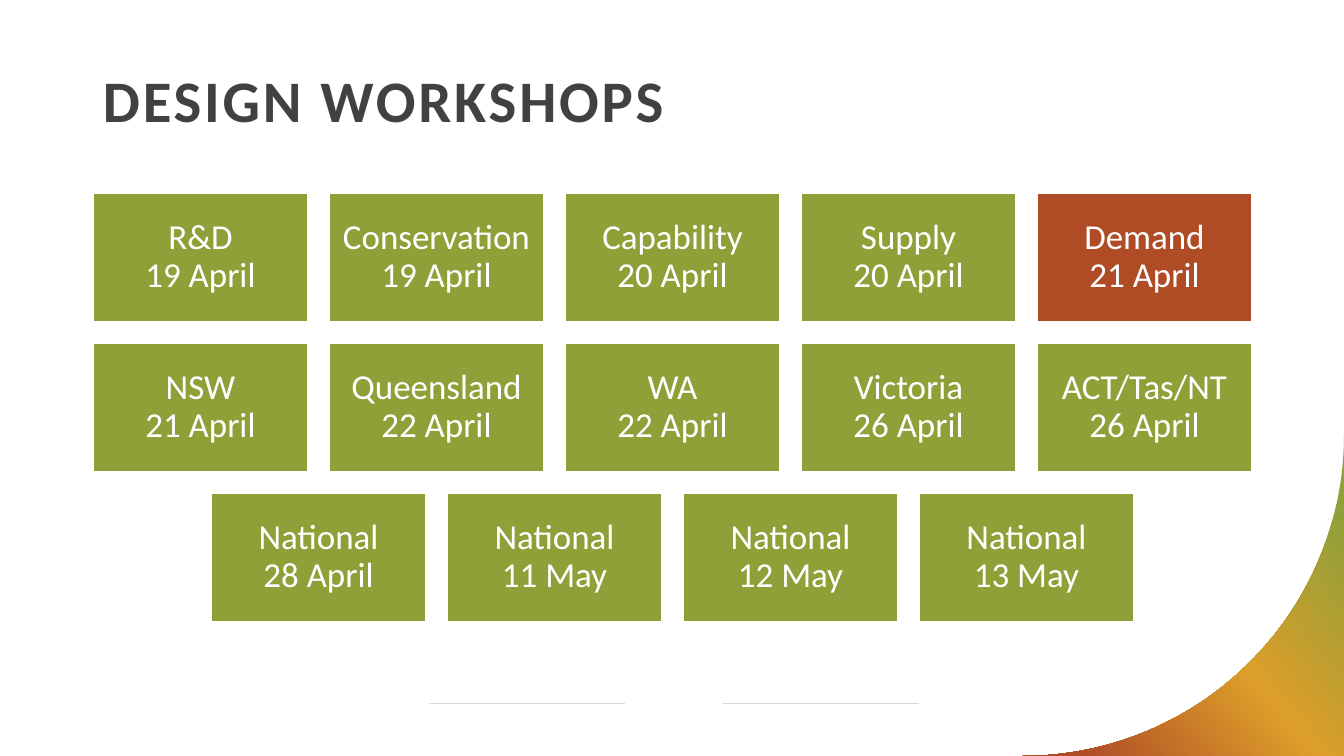
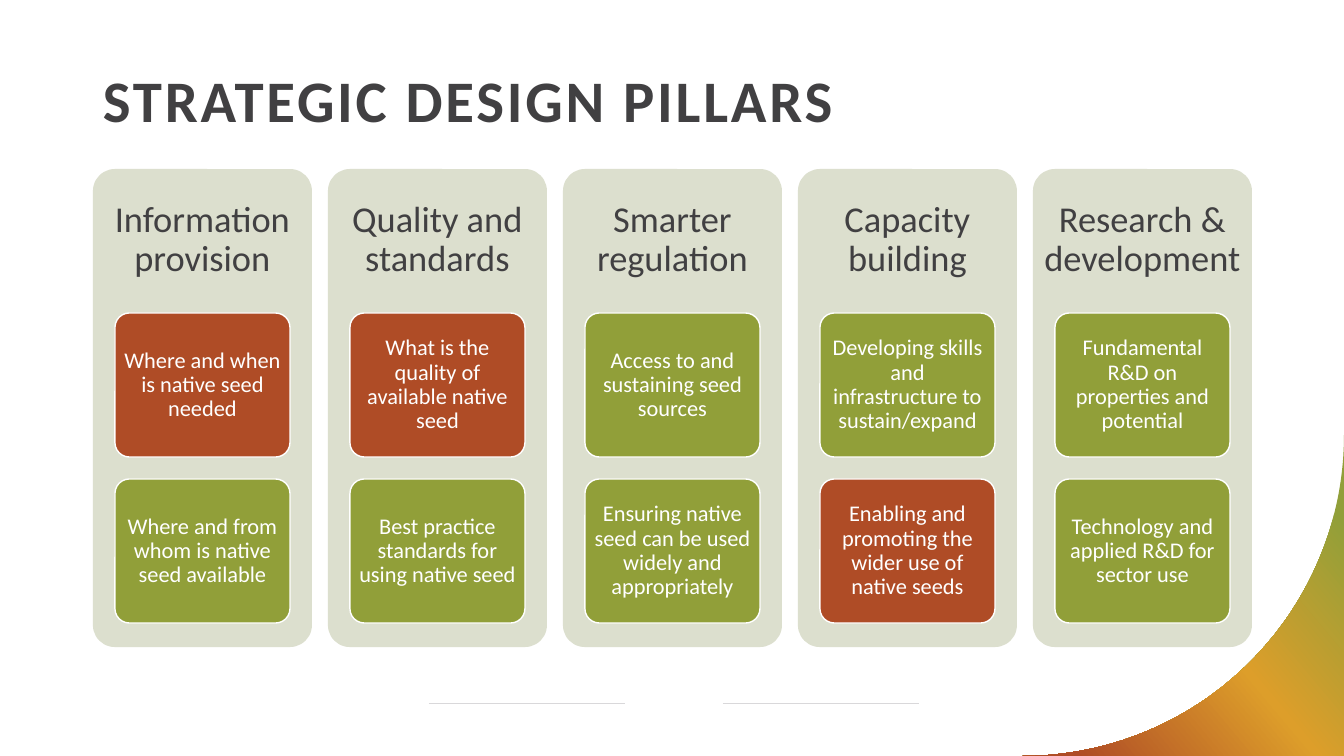
"""Builds two slides on design workshops and strategic design pillars."""
from copy import deepcopy
from dataclasses import dataclass
from math import cos, pi, sin

from pptx import Presentation
from pptx.dml.color import RGBColor
from pptx.enum.shapes import MSO_CONNECTOR, MSO_SHAPE
from pptx.enum.text import MSO_ANCHOR, PP_ALIGN
from pptx.oxml.ns import qn
from pptx.oxml.xmlchemy import OxmlElement
from pptx.util import Pt

RECT, ROUND = MSO_SHAPE.RECTANGLE, MSO_SHAPE.ROUNDED_RECTANGLE
LINE = MSO_CONNECTOR.STRAIGHT
TOP, MIDDLE = MSO_ANCHOR.TOP, MSO_ANCHOR.MIDDLE
LEFT, CENTER = PP_ALIGN.LEFT, PP_ALIGN.CENTER

WIDE, HIGH = 1344, 756
SCALE = 12192000 / WIDE
EDGE = 93


@dataclass(frozen=True)
class Theme:
    """Colours, type sizes and font."""
    ink: str = "414042"
    white: str = "FFFFFF"
    green: str = "919F39"
    gold: str = "DD9E2A"
    red: str = "AF4C26"
    pale: str = "DCDFCE"
    rule: str = "D9D8DA"
    font: str = "Calibri"
    title: int = 42
    head: int = 26
    tile: int = 25
    card: int = 16


THEME = Theme()

SHOPS = (
    (("R&D", "19 April"), ("Conservation", "19 April"), ("Capability", "20 April"),
     ("Supply", "20 April"), ("Demand", "21 April")),
    (("NSW", "21 April"), ("Queensland", "22 April"), ("WA", "22 April"),
     ("Victoria", "26 April"), ("ACT/Tas/NT", "26 April")),
    (("National", "28 April"), ("National", "11 May"), ("National", "12 May"),
     ("National", "13 May")),
)
HOT_SHOP = "Demand"

PILLARS = (
    ("Information provision", "Where and when is native seed needed",
     "Where and from whom is native seed available"),
    ("Quality and standards", "What is the quality of available native seed",
     "Best practice standards for using native seed"),
    ("Smarter regulation", "Access to and sustaining seed sources",
     "Ensuring native seed can be used widely and appropriately"),
    ("Capacity building", "Developing skills and infrastructure to sustain/expand",
     "Enabling and promoting the wider use of native seeds"),
    ("Research & development", "Fundamental R&D on properties and potential",
     "Technology and applied R&D for sector use"),
)
HOT_CARDS = (PILLARS[0][1], PILLARS[1][1], PILLARS[3][2])


def px(*sizes):
    """Turn pixel lengths into EMU."""
    return [round(size * SCALE) for size in sizes]


def rgb(code):
    """Turn a hex code into a colour."""
    return RGBColor.from_string(code)


def write(shape, text, size, color, inset, align=CENTER, anchor=MIDDLE):
    """Put one styled paragraph in a shape and return the paragraph."""
    frame = shape.text_frame
    frame.word_wrap = True
    frame.vertical_anchor = anchor
    pad, = px(inset)
    frame.margin_left = frame.margin_right = pad
    frame.margin_top = frame.margin_bottom = pad
    frame.text = text
    para = frame.paragraphs[0]
    para.alignment = align
    para.line_spacing = 0.9
    for run in para.runs:
        run.font.name = THEME.font
        run.font.size = Pt(size)
        run.font.color.rgb = rgb(color)
    return para


def label(slide, box, text, size, color, inset, align=CENTER, anchor=MIDDLE):
    """Add a text box and return its paragraph."""
    shape = slide.shapes.add_textbox(*px(*box))
    return write(shape, text, size, color, inset, align, anchor)


def block(slide, kind, box, fill, edge=None):
    """Add a filled shape, outlined if an edge colour is given."""
    shape = slide.shapes.add_shape(kind, *px(*box))
    shape.shadow.inherit = False
    shape.fill.solid()
    shape.fill.fore_color.rgb = rgb(fill)
    if edge:
        shape.line.color.rgb = rgb(edge)
        shape.line.width = Pt(1)
    else:
        shape.line.fill.background()
    if kind == ROUND:
        shape.adjustments[0] = 0.1
    return shape


def rule(slide, left, right, top):
    """Add a thin level line."""
    line = slide.shapes.add_connector(LINE, *px(left, top, right, top))
    line.line.color.rgb = rgb(THEME.rule)
    line.line.width = Pt(0.5)
    line._element.spPr.append(OxmlElement("a:effectLst"))


def corner(slide):
    """Add the curved gradient corner at the bottom right."""
    size, steps = 321, 90
    turns = [pi / 2 * step / steps for step in range(steps + 1)]
    arc = [px(WIDE - size + size * cos(turn), HIGH - size + size * sin(turn))
           for turn in turns]
    pen = slide.shapes.build_freeform(*px(WIDE, HIGH), scale=1.0)
    pen.add_line_segments(arc, close=True)
    shape = pen.convert_to_shape()
    shape.shadow.inherit = False
    shape.line.fill.background()
    fill = shape.fill
    fill.gradient()
    fill.gradient_angle = 220
    stops = shape._element.spPr.find(".//" + qn("a:gsLst"))
    stops.append(deepcopy(stops[-1]))
    marks = ((0.12, THEME.green), (0.5, THEME.gold), (0.91, THEME.red))
    for stop, (place, color) in zip(fill.gradient_stops, marks):
        stop.position = place
        stop.color.rgb = rgb(color)


def page(deck, title):
    """Add a slide with the shared lines, corner and title."""
    slide = deck.slides.add_slide(deck.slide_layouts[6])
    for left in (429, 723):
        rule(slide, left, left + 196, 703)
    corner(slide)
    para = label(slide, (EDGE, 67, 1159, 102), title, THEME.title, THEME.ink,
                 5, LEFT, TOP)
    para.runs[0].font.bold = True
    para.runs[0]._r.get_or_add_rPr().set("spc", "200")
    slide.shapes[-1].text_frame.margin_left, = px(10)
    return slide


def shops(slide):
    """Draw the rows of workshop tiles, each row centred."""
    wide, high, step, drop = 215, 129, 236, 150
    most = max(len(row) for row in SHOPS)
    for line, row in enumerate(SHOPS):
        left = EDGE + (most - len(row)) * step // 2
        for col, (name, date) in enumerate(row):
            fill = THEME.red if name == HOT_SHOP else THEME.green
            box = (left + col * step, 193 + line * drop, wide, high)
            tile = block(slide, RECT, box, fill, THEME.white)
            write(tile, f"{name}\v{date}", THEME.tile, THEME.white, 10)


def pillars(slide):
    """Draw the pillars, each with a heading and its cards."""
    top, wide, step, pad = 169, 219, 235, 22
    for col, (head, *cards) in enumerate(PILLARS):
        left = EDGE + col * step
        block(slide, ROUND, (left, top, wide, 478), THEME.pale)
        label(slide, (left, top, wide, 143), head, THEME.head, THEME.ink, 8)
        for line, text in enumerate(cards):
            fill = THEME.red if text in HOT_CARDS else THEME.green
            box = (left + pad, 313 + line * 166, wide - 2 * pad, 144)
            card = block(slide, ROUND, box, fill, THEME.white)
            write(card, text, THEME.card, THEME.white, 4)


def main():
    """Build and save the deck."""
    deck = Presentation()
    deck.slide_width, deck.slide_height = px(WIDE, HIGH)
    shops(page(deck, "DESIGN WORKSHOPS"))
    pillars(page(deck, "STRATEGIC DESIGN PILLARS"))
    deck.save("out.pptx")


if __name__ == "__main__":
    main()
